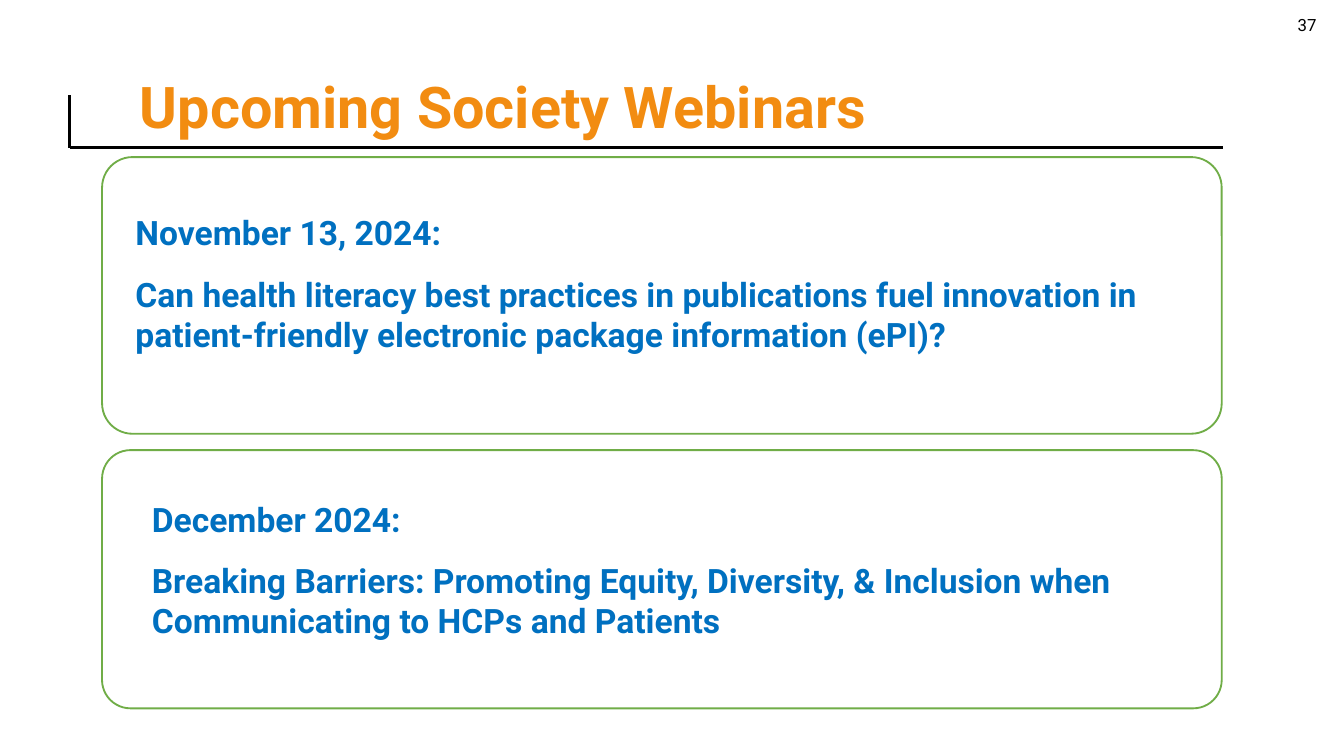
from lxml import etree
from pptx import Presentation
from pptx import util as u
from pptx.dml.color import RGBColor
from pptx.enum import shapes, text
from pptx.oxml.ns import qn

FONT = "Roboto"
BLACK, ORANGE, BLUE, GREEN = "000000", "F28C11", "0070C0", "70AD47"

WEBINARS = [
    {
        "card": (1.93, 2.97, 21.16, 5.23),
        "box": (2.31, 3.89, 20.5, 2.95),
        "lines": [
            "November 13, 2024:",
            "Can health literacy best practices in publications fuel innovation in "
            "patient-friendly electronic package information (ePI)?",
        ],
    },
    {
        "card": (1.93, 8.51, 21.16, 4.88),
        "box": (2.62, 9.3, 19.48, 2.95),
        "lines": [
            "December 2024:",
            "Breaking Barriers: Promoting Equity, Diversity, & Inclusion when "
            "Communicating to HCPs and Patients",
        ],
    },
]


def rgb(value):
    return RGBColor.from_string(value)


def cm(values):
    return [u.Cm(v) for v in values]


def add_run(p, words, size, color, bold=False):
    r = p.add_run()
    r.text = words
    r.font.name = FONT
    r.font.size = u.Pt(size)
    r.font.bold = bold
    r.font.color.rgb = rgb(color)


def set_title(s, words, at):
    sp = s.shapes.title
    sp.left, sp.top, sp.width, sp.height = cm(at)
    tf = sp.text_frame
    tf.word_wrap = True
    tf.auto_size = text.MSO_AUTO_SIZE.NONE
    tf.vertical_anchor = text.MSO_ANCHOR.BOTTOM
    p = tf.paragraphs[0]
    p.alignment = text.PP_ALIGN.LEFT
    p.line_spacing = 0.9
    add_run(p, words, 30.8, ORANGE, True)


def add_rule(s, *ends):
    line = s.shapes.add_connector(shapes.MSO_CONNECTOR.STRAIGHT, *cm(ends))
    line.line.color.rgb = rgb(BLACK)
    line.line.width = u.Pt(1.5)
    etree.SubElement(line._element.spPr, qn("a:effectLst"))


def add_card(s, at):
    sp = s.shapes.add_shape(shapes.MSO_SHAPE.ROUNDED_RECTANGLE, *cm(at))
    sp.adjustments[0] = 0.11
    sp.shadow.inherit = False
    sp.fill.background()
    sp.line.color.rgb = rgb(GREEN)
    sp.line.width = u.Pt(1)


def add_text(s, at):
    tf = s.shapes.add_textbox(*cm(at)).text_frame
    tf.word_wrap = True
    return tf


def add_webinar(s, at, lines):
    tf = add_text(s, at)
    tf.auto_size = text.MSO_AUTO_SIZE.SHAPE_TO_FIT_TEXT
    for i, words in enumerate(lines):
        p = tf.add_paragraph() if i else tf.paragraphs[0]
        p.space_after = u.Pt(11.2)
        add_run(p, words, 18, BLUE, True)


def add_page_number(s, number, at):
    tf = add_text(s, at)
    tf.vertical_anchor = text.MSO_ANCHOR.MIDDLE
    p = tf.paragraphs[0]
    p.alignment = text.PP_ALIGN.RIGHT
    add_run(p, number, 9, BLACK)


def main():
    prs = Presentation()
    prs.slide_width, prs.slide_height = cm((25.4, 14.29))
    s = prs.slides.add_slide(prs.slide_layouts[5])
    add_rule(s, 1.32, 1.8, 1.32, 2.79)
    add_rule(s, 1.32, 2.79, 23.11, 2.79)
    set_title(s, "Upcoming Society Webinars", (2.39, 0.18, 20.73, 2.62))
    add_page_number(s, "37", (19.41, 0.08, 5.72, 0.76))
    for webinar in WEBINARS:
        add_card(s, webinar["card"])
        add_webinar(s, webinar["box"], webinar["lines"])
    prs.save("out.pptx")


if __name__ == "__main__":
    main()
